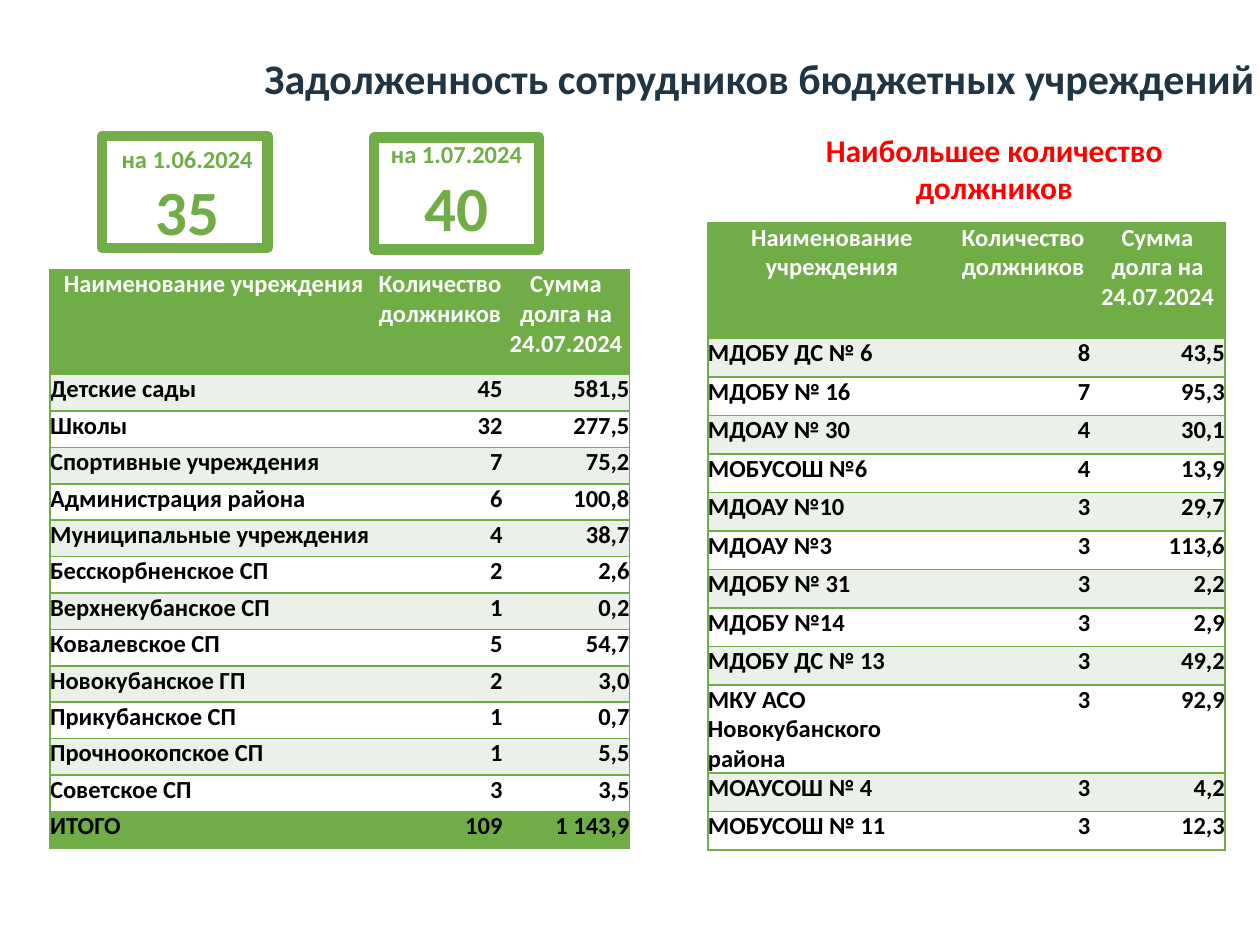
from lxml.etree import SubElement
from pptx import Presentation
from pptx.dml.color import RGBColor
from pptx.enum.shapes import MSO_SHAPE as Preset
from pptx.enum.text import MSO_ANCHOR as Anchor, PP_ALIGN as Align
from pptx.oxml.ns import qn
from pptx.util import Cm, Pt

# Content
TITLE = "Задолженность сотрудников бюджетных учреждений"
SUBTITLE = "Наибольшее количество должников"
HEADER = ("Наименование учреждения", "Количество должников", "Сумма долга на 24.07.2024")
BY_GROUP = [
    ("Детские сады", "45", "581,5"),
    ("Школы", "32", "277,5"),
    ("Спортивные учреждения", "7", "75,2"),
    ("Администрация района", "6", "100,8"),
    ("Муниципальные учреждения", "4", "38,7"),
    ("Бесскорбненское СП", "2", "2,6"),
    ("Верхнекубанское СП", "1", "0,2"),
    ("Ковалевское СП", "5", "54,7"),
    ("Новокубанское ГП", "2", "3,0"),
    ("Прикубанское СП", "1", "0,7"),
    ("Прочноокопское СП", "1", "5,5"),
    ("Советское СП", "3", "3,5"),
    ("ИТОГО", "109", "1 143,9"),
]
TOP_DEBTORS = [
    ("МДОБУ ДС № 6", "8", "43,5"),
    ("МДОБУ № 16", "7", "95,3"),
    ("МДОАУ № 30", "4", "30,1"),
    ("МОБУСОШ №6", "4", "13,9"),
    ("МДОАУ №10", "3", "29,7"),
    ("МДОАУ №3", "3", "113,6"),
    ("МДОБУ № 31", "3", "2,2"),
    ("МДОБУ №14", "3", "2,9"),
    ("МДОБУ ДС № 13", "3", "49,2"),
    ("МКУ АСО Новокубанского района", "3", "92,9"),
    ("МОАУСОШ № 4", "3", "4,2"),
    ("МОБУСОШ № 11", "3", "12,3"),
]
# Date, number, text box (left, top), frame (left, top), in cm
COUNTERS = [
    ("на 1.06.2024", "35", (2.11, 2.77), (2.06, 2.74)),
    ("на 1.07.2024", "40", (7.54, 2.67), (7.54, 2.77)),
]
# Heights in cm; tall holds rows that need more than an equal share
TABLES = [
    dict(rows=BY_GROUP, at=(1.01, 5.43), widths=(6.6, 2.52, 2.56),
         height=11.67, header=2.12, tall={}),
    dict(rows=TOP_DEBTORS, at=(14.27, 4.49), widths=(5, 2.71, 2.71),
         height=12.64, header=2.33, tall={10: 1.77}),
]
COUNTER_SIZE = (3.33, 2.26)
GREEN, BAND, WHITE = "70AD47", "EBF1E9", "FFFFFF"
BLACK, NAVY, RED = "000000", "1F3543", "FF0000"


def color(value):
    return RGBColor.from_string(value)


def write(paragraph, text, size, ink, align=Align.CENTER):
    paragraph.text = text
    paragraph.alignment = align
    font = paragraph.runs[0].font
    for name, value in dict(name="Calibri", size=Pt(size), bold=True).items():
        setattr(font, name, value)
    font.color.rgb = color(ink)


def add_text(slide, box, lines, anchor=Anchor.TOP):
    frame = slide.shapes.add_textbox(*map(Cm, box)).text_frame
    frame.word_wrap = True
    frame.vertical_anchor = anchor
    for index, line in enumerate(lines):
        write(frame.add_paragraph() if index else frame.paragraphs[0], *line)
    return frame


def add_border(cell, side):
    line = SubElement(cell._tc.get_or_add_tcPr(), qn(f"a:ln{side}"), w=str(Pt(1)))
    SubElement(SubElement(line, qn("a:solidFill")), qn("a:srgbClr"), val=GREEN)


def add_debt_table(slide, rows, at, widths, height, header, tall):
    rows = [HEADER, *rows]
    heights = {0: header, **tall}
    share = (height - sum(heights.values())) / (len(rows) - len(heights))
    size = (sum(widths), height)
    table = slide.shapes.add_table(len(rows), len(widths), *map(Cm, at + size)).table
    # "No style, no grid", so that only the borders below show
    style = table._tbl.tblPr.find(qn("a:tableStyleId"))
    style.text = "{2D5ABB26-0587-4C30-8999-92F81FD0307C}"
    for column, width in zip(table.columns, widths):
        column.width = Cm(width)
    for r, values in enumerate(rows):
        table.rows[r].height = Cm(heights.get(r, share))
        solid = r == 0 or values[0] == "ИТОГО"
        fill = GREEN if solid else BAND if r % 2 else WHITE
        for c, value in enumerate(values):
            cell = table.cell(r, c)
            for side in ("left", "right", "top", "bottom"):
                setattr(cell, f"margin_{side}", 0)
            for side in ("L" if c == 0 else "") + ("R" if c == 2 else "") + "TB":
                add_border(cell, side)
            cell.fill.solid()
            cell.fill.fore_color.rgb = color(fill)
            align = Align.CENTER if r == 0 else Align.RIGHT if c else Align.LEFT
            write(cell.text_frame.paragraphs[0], value, 14, BLACK if r else WHITE, align)


def main():
    presentation = Presentation()
    presentation.slide_width, presentation.slide_height = Cm(25.4), Cm(19.05)
    slide = presentation.slides.add_slide(presentation.slide_layouts[6])

    # Headings
    title = add_text(slide, (4.5, 0.51, 21.62, 2.24), [(TITLE, 24, NAVY)], Anchor.MIDDLE)
    title.paragraphs[0].line_spacing = 0.9
    add_text(slide, (16.26, 2.51, 7.57, 1.8), [(SUBTITLE, 18, RED)])

    # Framed totals by date
    for date, number, text_at, frame_at in COUNTERS:
        add_text(slide, text_at + (3.33, 2.39), [(date, 14, GREEN), (number, 36, GREEN)])
        shape = slide.shapes.add_shape(Preset.RECTANGLE, *map(Cm, frame_at + COUNTER_SIZE))
        shape.shadow.inherit = False
        shape.fill.background()
        shape.line.color.rgb = color(GREEN)
        shape.line.width = Pt(6)

    # Debt tables
    for table in TABLES:
        add_debt_table(slide, **table)

    presentation.save("out.pptx")


if __name__ == "__main__":
    main()
